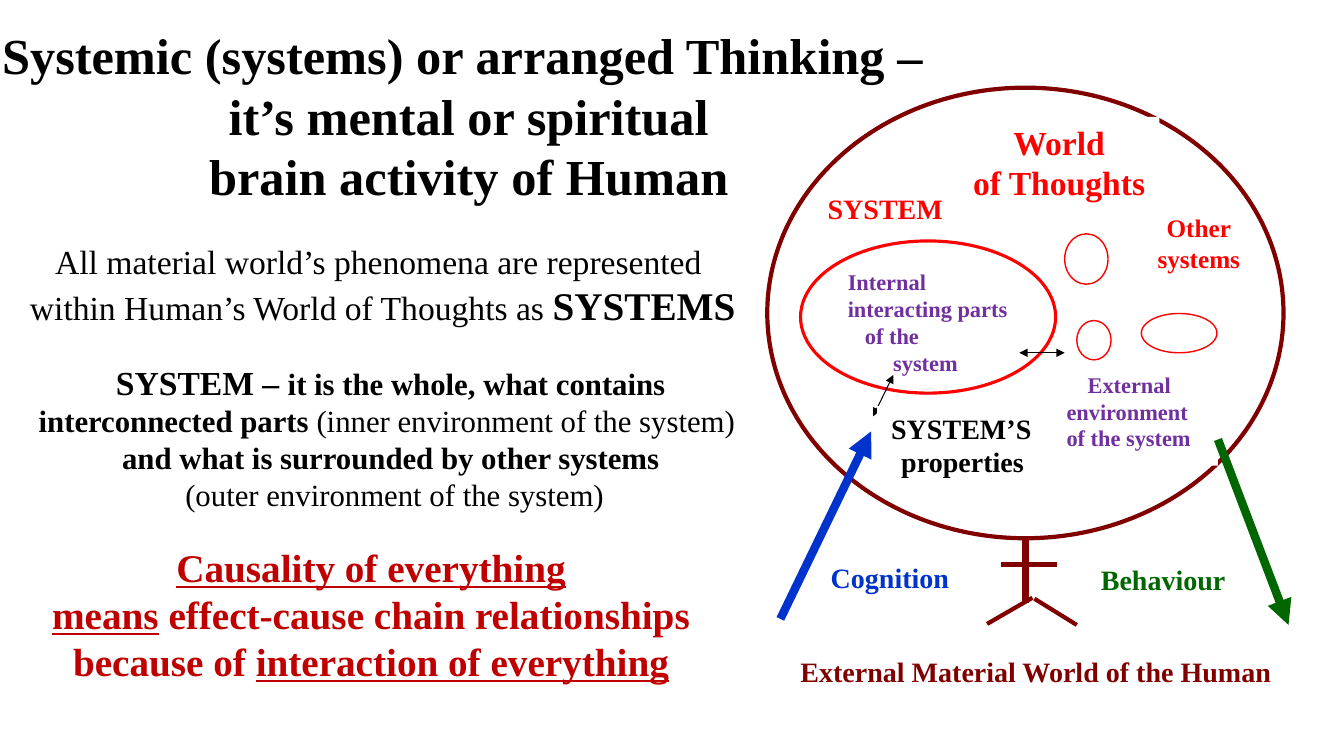
from dataclasses import dataclass

from lxml import etree
from pptx import Presentation
from pptx.dml.color import RGBColor
from pptx.enum.shapes import MSO_CONNECTOR, MSO_SHAPE
from pptx.enum.text import MSO_ANCHOR, MSO_AUTO_SIZE, PP_ALIGN
from pptx.oxml.ns import qn
from pptx.util import Inches, Pt

OVAL, BOX = MSO_SHAPE.OVAL, MSO_SHAPE.RECTANGLE
STRAIGHT = MSO_CONNECTOR.STRAIGHT
LEFT, CENTER, TOP = PP_ALIGN.LEFT, PP_ALIGN.CENTER, MSO_ANCHOR.TOP
SLIDE_W, SLIDE_H = 13.33, 7.5


@dataclass(frozen=True)
class Theme:
    font: str = "Times New Roman"
    paper: str = "FFFFFF"
    ink: str = "000000"
    human: str = "800000"
    system: str = "FF0000"
    environment: str = "7030A0"
    cognition: str = "0033CC"
    behaviour: str = "006600"
    causality: str = "C00000"
    title: int = 36
    strong: int = 28
    lead: int = 24
    body: int = 22
    label: int = 20
    minor: int = 18
    note: int = 16


T = Theme()

# Content: each line is a list of (text, styles); B bold, U underlined, a number sets the size
TITLE = ["Systemic (systems) or arranged Thinking – ",
         "it’s mental or spiritual",
         "brain activity of Human"]
TITLE_AREA = (0, 0.19, 9.3, 1.92)

STATEMENTS = [  # area, size, colour, lines
    ((0.15, 2.34, 7.29, 0.98), T.lead, T.ink, [
        [("All material world’s phenomena are represented ", {})],
        [("within Human’s World of Thoughts as ", {}),
         ("SYSTEMS", {"bold": True, "size": T.strong})]]),
    ((0.21, 3.54, 7.33, 1.62), T.body, T.ink, [
        [("SYSTEM – ", {"bold": True, "size": T.lead}),
         ("it is the whole, what contains", {"bold": True})],
        [("interconnected parts ", {"bold": True}),
         ("(inner environment of the system) ", {})],
        [("and what is surrounded by other systems", {"bold": True})],
        [(" (outer environment of the system)", {})]]),
    ((0.21, 5.34, 6.94, 1.51), T.strong, T.causality, [
        [("Causality of everything", {"bold": True, "underline": True})],
        [("means", {"bold": True, "underline": True}),
         (" effect-cause chain relationships", {"bold": True})],
        [("because of ", {"bold": True}),
         ("interaction of everything", {"bold": True, "underline": True})]]),
]

HEAD = (7.61, 0.87, 5.12, 4.47)
INNER_SYSTEM = (7.94, 2.39, 2.53, 1.51)
OTHER_SYSTEMS = [(10.56, 2.32, 0.43, 0.5),
                 (11.32, 3.11, 0.75, 0.39),
                 (10.68, 3.18, 0.34, 0.39)]
INNER_PARTS = [("Internal", 0), ("interacting parts", 0),
               ("of the", 0.17), ("system", 0.45)]

LABELS = [  # area, filled, size, colour, alignment, (line, indent)
    ((10.48, 3.63, 1.6, 0.99), True, T.note, T.environment, LEFT,
     [("External", 0.21), ("environment", 0), ("of the system", 0)]),
    ((8.7, 4.03, 1.78, 0.81), True, T.label, T.ink, LEFT,
     [("SYSTEM’S", 0.04), ("properties", 0.14)]),
    ((8.11, 1.85, 1.41, 0.5), True, T.label, T.system, LEFT, [("SYSTEM", 0)]),
    ((9.43, 1.16, 2.07, 0.84), True, T.lead, T.system, CENTER,
     [("World", 0.08), ("of Thoughts", 0.08)]),
    ((7.84, 6.44, 4.94, 0.62), True, T.label, T.human, LEFT,
     [("External Material World of the Human", 0)]),
    ((11.28, 2.06, 1.22, 0.75), False, T.minor, T.system, CENTER,
     [("Other", 0), ("systems", 0)]),
    ((8.14, 5.51, 1.48, 0.47), False, T.label, T.cognition, LEFT,
     [("Cognition", 0)]),
    ((10.82, 5.53, 1.63, 0.47), False, T.label, T.behaviour, LEFT,
     [("Behaviour", 0)]),
]

INTERACTIONS = [(10.56, 3.5, 10.11, 3.5), (8.86, 3.72, 8.66, 4.13)]
FLOWS = [((7.74, 6.14, 8.64, 4.28), T.cognition),
         ((12.08, 4.36, 12.78, 6.2), T.behaviour)]
# Body, legs and arms, measured from the chin
LIMBS = [((0, 0, 0, 0.64), 4.5), ((0.07, 0.59, -0.38, 0.85), 3),
         ((0.09, 0.6, 0.51, 0.86), 3), ((-0.24, 0.26, 0.31, 0.26), 3)]

deck = Presentation()
deck.slide_width, deck.slide_height = Inches(SLIDE_W), Inches(SLIDE_H)
slide = deck.slides.add_slide(deck.slide_layouts[5])
shapes = slide.shapes


def inches(area):
    return [Inches(length) for length in area]


def style(font, size, color, bold=None):
    font.name, font.size, font.bold = T.font, Pt(size), bold
    font.color.rgb = RGBColor.from_string(color)


def write(frame, lines, size, color, align):
    """Write (line, indent) pairs in bold."""
    frame.word_wrap, frame.vertical_anchor = True, TOP
    frame.margin_right = 0 if align == LEFT else Inches(0.1)
    for i, (text, indent) in enumerate(lines):
        line = frame.paragraphs[0] if i == 0 else frame.add_paragraph()
        line.text, line.alignment = text, align
        style(line.font, size, color, True)
        if indent:
            line._p.get_or_add_pPr().set("marL", str(Inches(indent)))


def shape(kind, area, line=None, width=1):
    part = shapes.add_shape(kind, *inches(area))
    part.shadow.inherit = False
    part.fill.solid()
    part.fill.fore_color.rgb = RGBColor.from_string(T.paper)
    if line:
        part.line.color.rgb = RGBColor.from_string(line)
        part.line.width = Pt(width)
    else:
        part.line.fill.background()
    return part


def connect(ends, color, width, arrows=()):
    link = shapes.add_connector(STRAIGHT, *inches(ends))
    link.line.color.rgb = RGBColor.from_string(color)
    link.line.width = Pt(width)
    for arrow in arrows:
        etree.SubElement(link.line._get_or_add_ln(), qn(arrow), type="triangle")
    etree.SubElement(link._element.spPr, qn("a:effectLst"))


# Title
title = shapes.title
title.left, title.top, title.width, title.height = inches(TITLE_AREA)
write(title.text_frame, [(line, 0) for line in TITLE], T.title, T.ink, CENTER)
title.text_frame.auto_size = MSO_AUTO_SIZE.NONE
title.text_frame.word_wrap = False
title.text_frame.margin_left = title.text_frame.margin_right = 0

# Statements on the left
for area, size, color, lines in STATEMENTS:
    frame = shapes.add_textbox(*inches(area)).text_frame
    frame.word_wrap = True
    for i, runs in enumerate(lines):
        line = frame.paragraphs[0] if i == 0 else frame.add_paragraph()
        line.alignment = CENTER
        style(line.font, size, color)
        for text, marks in runs:
            run = line.add_run()
            run.text = text
            style(run.font, marks.get("size", size), color, marks.get("bold"))
            run.font.underline = marks.get("underline")

# Head with the systems in it
shape(OVAL, HEAD, T.human, 3)
inner_system = shape(OVAL, INNER_SYSTEM, T.system, 2.25)
write(inner_system.text_frame, INNER_PARTS, T.note, T.environment, LEFT)
for area in OTHER_SYSTEMS:
    shape(OVAL, area, T.system)
for ends in INTERACTIONS:
    connect(ends, T.ink, 0.75, ("a:headEnd", "a:tailEnd"))

# Labels
for area, filled, size, color, align, lines in LABELS:
    label = shape(BOX, area) if filled else shapes.add_textbox(*inches(area))
    write(label.text_frame, lines, size, color, align)

# Body of the human, then cognition and behaviour
chin_x, chin_y = HEAD[0] + HEAD[2] / 2, HEAD[1] + HEAD[3]
for (x1, y1, x2, y2), width in LIMBS:
    connect((chin_x + x1, chin_y + y1, chin_x + x2, chin_y + y2), T.human, width)
for ends, color in FLOWS:
    connect(ends, color, 6, ("a:tailEnd",))

deck.save("out.pptx")
